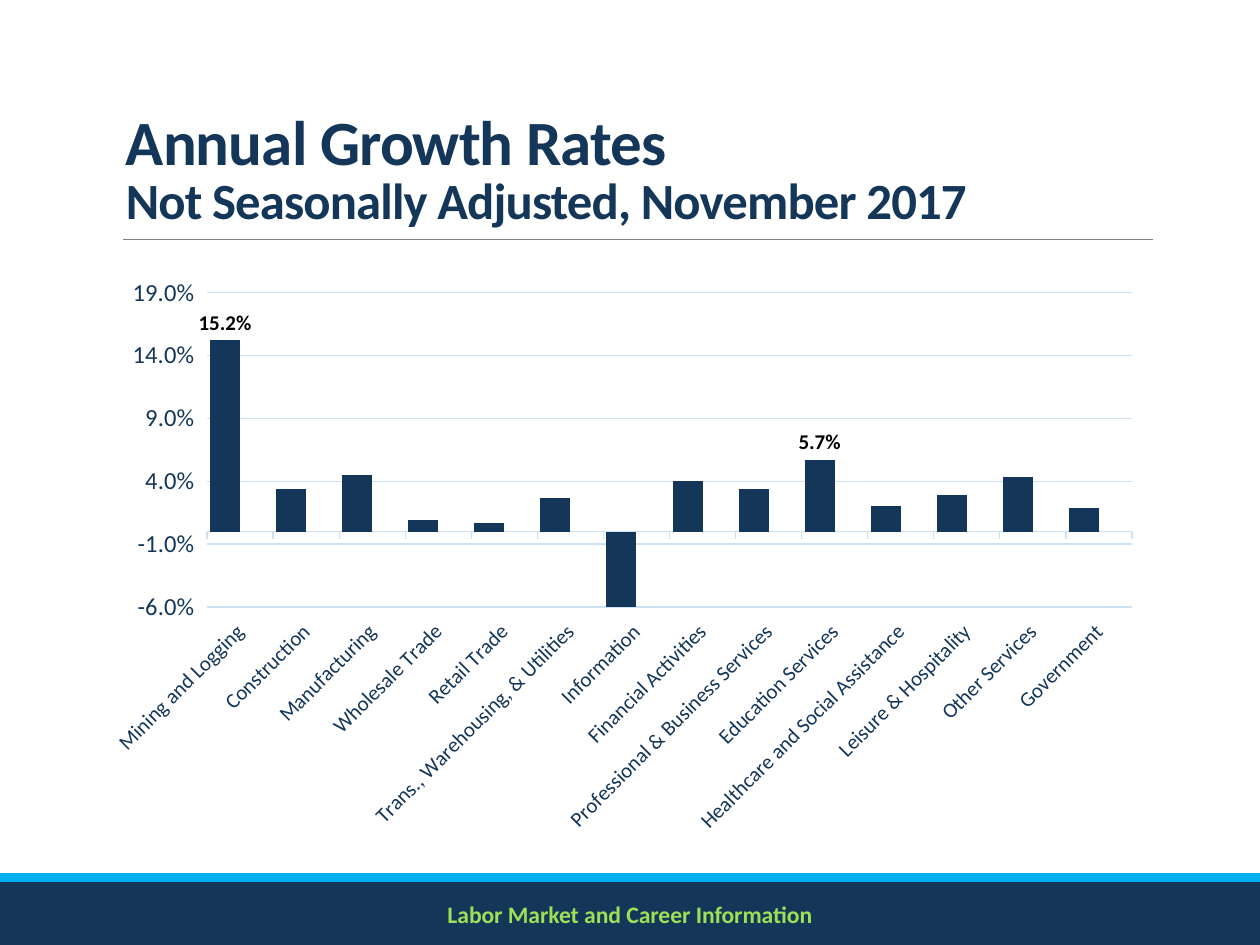
from lxml.etree import SubElement
from pptx import Presentation
from pptx.chart.data import CategoryChartData
from pptx.dml.color import RGBColor
from pptx.enum.chart import XL_CHART_TYPE, XL_LABEL_POSITION, XL_TICK_LABEL_POSITION, XL_TICK_MARK
from pptx.enum.shapes import MSO_CONNECTOR, MSO_SHAPE
from pptx.enum.text import MSO_ANCHOR, PP_ALIGN
from pptx.oxml import parse_xml
from pptx.oxml.ns import nsdecls, qn
from pptx.util import Inches, Pt

NAVY = RGBColor(0x13, 0x36, 0x59)
SKY = RGBColor(0x00, 0xB0, 0xF0)
GREEN = RGBColor(0x81, 0xD2, 0x28)
LIME = RGBColor(0x9F, 0xDF, 0x58)
GRAY = RGBColor(0x80, 0x80, 0x80)
PALE = RGBColor(0xCD, 0xE1, 0xF4)
BLACK = RGBColor(0, 0, 0)
FONT = "Calibri"
LEFT, RIGHT = 0.9, 9.15


def style(font, size, color, bold=False):
    font.name = FONT
    font.size = Pt(size)
    font.color.rgb = color
    font.bold = bold


def add_text(left, top, width, height, text):
    box = page.shapes.add_textbox(Inches(left), Inches(top), Inches(width), Inches(height))
    frame = box.text_frame
    frame.word_wrap = True
    frame.vertical_anchor = MSO_ANCHOR.MIDDLE
    frame.text = text
    return frame.paragraphs[0]


deck = Presentation()
deck.slide_width, deck.slide_height = Inches(10), Inches(7.5)
page = deck.slides.add_slide(deck.slide_layouts[6])

for top, height, color in [(7, 0.5, NAVY), (6.93, 0.07, SKY)]:
    band = page.shapes.add_shape(
        MSO_SHAPE.RECTANGLE, 0, Inches(top), deck.slide_width, Inches(height))
    band.shadow.inherit = False
    band.fill.solid()
    band.fill.fore_color.rgb = color
    band.line.fill.background()

rule = page.shapes.add_connector(
    MSO_CONNECTOR.STRAIGHT, Inches(0.98), Inches(1.9), Inches(RIGHT), Inches(1.9))
rule.line.color.rgb = GRAY
rule.line.width = Pt(0.5)
SubElement(rule._element.spPr, qn("a:effectLst"))

footer = add_text(0, 7.08, 10, 0.35, "Labor Market and Career Information")
footer.alignment = PP_ALIGN.CENTER
style(footer.runs[0].font, 13.5, LIME, True)

title = add_text(LEFT, 0.83, 8.92, 1.07,
                 "Annual Growth Rates\vNot Seasonally Adjusted, November 2017")
title.line_spacing = 0.85
for span, size in zip(title.runs, (36, 29)):
    style(span.font, size, NAVY, True)
    span._r.get_or_add_rPr().set("spc", "-50")

growth = {
    "Mining and Logging": 0.152,
    "Construction": 0.034,
    "Manufacturing": 0.045,
    "Wholesale Trade": 0.009,
    "Retail Trade": 0.007,
    "Trans., Warehousing, & Utilities": 0.027,
    "Information": -0.065,
    "Financial Activities": 0.04,
    "Professional & Business Services": 0.034,
    "Education Services": 0.057,
    "Healthcare and Social Assistance": 0.02,
    "Leisure & Hospitality": 0.029,
    "Other Services": 0.043,
    "Government": 0.019,
}
data = CategoryChartData(number_format="0.0%")
data.categories = list(growth)
data.add_series("Series 1", list(growth.values()))
data.add_series("Series 2", [None] * len(growth))
chart = page.shapes.add_chart(
    XL_CHART_TYPE.COLUMN_CLUSTERED, Inches(LEFT), Inches(2.14),
    Inches(RIGHT - LEFT), Inches(4.54), data).chart
chart.has_legend = False
chart.has_title = False
style(chart.font, 10, BLACK)

plot = chart.plots[0]
plot.gap_width = 20
plot.overlap = 0
plot.vary_by_categories = False
for series, color in zip(plot.series, (NAVY, GREEN)):
    series.invert_if_negative = False
    series.format.fill.solid()
    series.format.fill.fore_color.rgb = color

rates = plot.series[0]
for index in (0, 9):
    label = rates.points[index].data_label
    style(label.font, 12, BLACK, True)
    label.position = XL_LABEL_POSITION.OUTSIDE_END
rates.data_labels.show_value = False
rates.data_labels.number_format = "0.0%"
rates.data_labels.number_format_is_linked = False

sectors = chart.category_axis
sectors.tick_label_position = XL_TICK_LABEL_POSITION.LOW
sectors.major_tick_mark = XL_TICK_MARK.OUTSIDE
sectors.format.line.color.rgb = PALE
sectors.format.line.width = Pt(0.75)
style(sectors.tick_labels.font, 12, NAVY)
sectors._element.find(qn("c:txPr")).find(qn("a:bodyPr")).set("rot", "-2700000")

scale = chart.value_axis
scale.minimum_scale, scale.maximum_scale, scale.major_unit = -0.06, 0.19, 0.05
scale.major_tick_mark = XL_TICK_MARK.OUTSIDE
scale.format.line.fill.background()
scale.major_gridlines.format.line.color.rgb = PALE
scale.major_gridlines.format.line.width = Pt(0.75)
scale.tick_labels.number_format = "0.0%"
scale.tick_labels.number_format_is_linked = False
style(scale.tick_labels.font, 14, NAVY)

plot_area = chart._chartSpace.chart.plotArea
for old in plot_area.findall(qn("c:layout")):
    plot_area.remove(old)
plot_area.insert(0, parse_xml(
    f'<c:layout {nsdecls("c")}><c:manualLayout><c:layoutTarget val="inner"/>'
    '<c:xMode val="edge"/><c:yMode val="edge"/><c:x val="0.09"/><c:y val="0.04"/>'
    '<c:w val="0.89"/><c:h val="0.55"/></c:manualLayout></c:layout>'))

deck.save("out.pptx")
